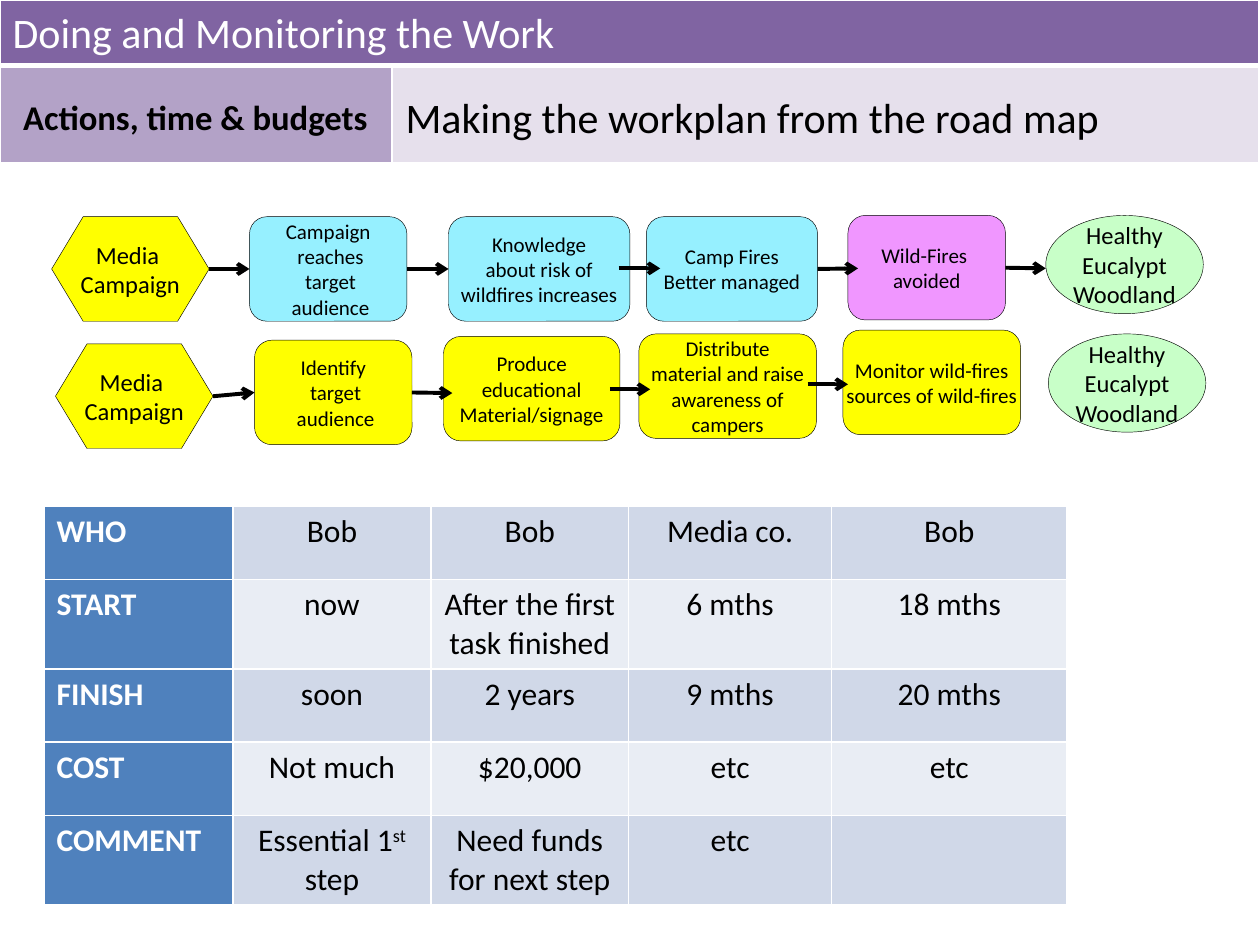
from dataclasses import dataclass

from lxml.etree import SubElement
from pptx import Presentation
from pptx.dml.color import RGBColor
from pptx.enum.shapes import MSO_CONNECTOR as Link, MSO_SHAPE as Shape
from pptx.enum.text import MSO_ANCHOR as Anchor, MSO_AUTO_SIZE as AutoSize, PP_ALIGN as Align
from pptx.oxml.ns import qn
from pptx.util import Inches, Pt


@dataclass(frozen=True)
class Theme:
    font: str = "Calibri"
    black: str = "000000"
    white: str = "FFFFFF"
    purple: str = "8064A2"
    mauve: str = "B3A2C7"
    lilac: str = "E6E0EC"
    yellow: str = "FFFF00"
    cyan: str = "96F0FF"
    pink: str = "F096FF"
    green: str = "C8FFC8"
    blue: str = "4F81BD"
    band_dark: str = "D0D8E8"
    band_light: str = "E9EDF4"
    title: float = 24
    section: float = 19.8
    cell: float = 18
    goal: float = 14
    step: float = 12


theme = Theme()
color = RGBColor.from_string
deck = Presentation()
deck.slide_width, deck.slide_height = Inches(10), Inches(7.5)
page = deck.slides.add_slide(deck.slide_layouts[5])

# Grid of 100 columns by 75 rows
COL, ROW = deck.slide_width / 100, deck.slide_height / 75


def place(left, top, width, height):
    return [round(left * COL), round(top * ROW), round(width * COL), round(height * ROW)]


def write(frame, lines, size, ink=theme.black, bold=False, align=Align.CENTER):
    """Fill a text frame; text between two carets is raised."""
    for number, line in enumerate(lines):
        para = frame.paragraphs[0] if number == 0 else frame.add_paragraph()
        para.alignment = align
        for index, part in enumerate(line.split("^")):
            span = para.add_run() if "\v" not in part else None
            if span is None:
                for row, piece in enumerate(part.split("\v")):
                    if row:
                        para.add_line_break()
                    para.add_run().text = piece
            else:
                span.text = part
                if index % 2:
                    span.font._element.set("baseline", "30000")
        for span in para.runs:
            for name, value in {"name": theme.font, "size": Pt(size), "bold": bold}.items():
                setattr(span.font, name, value)
            span.font.color.rgb = color(ink)


# Header bands and workplan, both as tables
plan = [
    ["WHO", "Bob", "Bob", "Media co.", "Bob"],
    ["START", "now", "After the first task finished", "6 mths", "18 mths"],
    ["FINISH", "soon", "2 years", "9 mths", "20 mths"],
    ["COST", "Not much", "$20,000", "etc", "etc"],
    ["COMMENT", "Essential 1^st^ step", "Need funds for next step", "etc", ""],
]
plan_fills = [
    [theme.blue] + [theme.band_light if row % 2 else theme.band_dark] * 4 for row in range(5)
]
header_fills = [[theme.purple] * 2, [theme.mauve, theme.lilac]]
tables = [
    (0, 0, [31.1, 68.8], [5.2, 7.7], header_fills, [["", ""]] * 2),
    (3.5, 40.2, [15, 15.7, 15.7, 16.1, 18.7], [5.8] * 5, plan_fills, plan),
]
for left, top, widths, heights, fills, texts in tables:
    is_header = fills is header_fills
    area = place(left, top, sum(widths), sum(heights))
    table = page.shapes.add_table(len(heights), len(widths), *area).table
    table.first_row = table.horz_banding = False
    for column, width in zip(table.columns, widths):
        column.width = round(width * COL)
    for row, height in zip(table.rows, heights):
        row.height = round(height * ROW)
    for r, row in enumerate(texts):
        for c, text in enumerate(row):
            cell = table.cell(r, c)
            props = cell._tc.get_or_add_tcPr()
            for side in ("lnL", "lnR", "lnT", "lnB"):
                thick = is_header and (r, side) in ((0, "lnB"), (1, "lnT"))
                edge = SubElement(props, qn(f"a:{side}"), w=str(Pt(3 if thick else 1)))
                paint = SubElement(edge, qn("a:solidFill"))
                SubElement(paint, qn("a:srgbClr"), val=theme.white)
            cell.fill.solid()
            cell.fill.fore_color.rgb = color(fills[r][c])
            if text:
                head = c == 0
                write(cell.text_frame, [text], theme.cell,
                      theme.white if head else theme.black, head,
                      Align.LEFT if head else Align.CENTER)
    if is_header:
        table.cell(0, 0).merge(table.cell(0, 1))

# Title, moved in front of the header bands
title = page.shapes.title
page.shapes._spTree.append(title._element)
title.left, title.top, title.width, title.height = place(0, 0, 99.8, 5.1)
section = page.shapes.add_textbox(*place(0.1, 5.7, 30.8, 7.1))
topic = page.shapes.add_textbox(*place(31.2, 6.8, 68.8, 5))
headings = [
    (title, "Doing and Monitoring the Work", theme.title, theme.white, False, Align.LEFT, Anchor.TOP),
    (section, "Actions, time & budgets", theme.section, theme.black, True, Align.CENTER, Anchor.MIDDLE),
    (topic, "Making the workplan from the road map", theme.title, theme.black, False, Align.LEFT, Anchor.TOP),
]
for box, text, size, ink, bold, align, anchor in headings:
    frame = box.text_frame
    layout = {"word_wrap": True, "auto_size": AutoSize.NONE, "vertical_anchor": anchor}
    for name, value in layout.items():
        setattr(frame, name, value)
    write(frame, [text], size, ink, bold, align)

# Road map (upper row) and its tasks (lower row): left, top, width, look, lines
start = (Shape.FLOWCHART_PREPARATION, theme.yellow, 8.3, theme.goal)
result = (Shape.ROUNDED_RECTANGLE, theme.cyan, 8.3, theme.step)
threat = (Shape.ROUNDED_RECTANGLE, theme.pink, 8.3, theme.step)
task = (Shape.ROUNDED_RECTANGLE, theme.yellow, 8.3, theme.step)
target = (Shape.OVAL, theme.green, 7.8, theme.goal)
campaign = ["Media ", "Campaign"]
woodland = ["Healthy", "Eucalypt", "Woodland"]
stages = [
    (4.1, 17.2, 12.5, start, campaign),
    (19.8, 17.2, 12.5, result, ["Campaign", " reaches", " target", " audience"]),
    (35.6, 17.2, 14.4, result, ["Knowledge\vabout risk of\vwildfires increases"]),
    (51.3, 17.2, 13.6, result, ["Camp Fires", "Better managed"]),
    (67.3, 17.1, 12.5, threat, ["Wild-Fires ", "avoided"]),
    (83, 17.1, 12.5, target, woodland),
    (4.4, 27.3, 12.5, start, campaign),
    (20.2, 27, 12.5, task, ["Identify", " target", " audience"]),
    (35.2, 26.7, 14, task, ["Produce\veducational", "Material/signage"]),
    (50.7, 26.5, 14.1, task, ["Distribute\vmaterial and raise\vawareness of\vcampers"]),
    (66.9, 26.2, 14.1, task, ["Monitor wild-fires\vsources of wild-fires"]),
    (83.2, 26.5, 12.5, target, woodland),
]
boxes = []
for left, top, width, (outline, fill, height, size), lines in stages:
    box = page.shapes.add_shape(outline, *place(left, top, width, height))
    box.shadow.inherit = False
    box.fill.solid()
    box.fill.fore_color.rgb = color(fill)
    box.line.color.rgb = color(theme.black)
    box.line.width = Pt(0.25)
    frame = box.text_frame
    frame.word_wrap = False
    frame.vertical_anchor = Anchor.MIDDLE
    if outline == Shape.OVAL:
        for side in ("left", "top", "right", "bottom"):
            setattr(frame, f"margin_{side}", 0)
    write(frame, lines, size)
    boxes.append(box)

# Arrows: left, right, row, stage joined at the start, stage joined at the end
arrows = [
    (16.6, 19.8, 21.4, 0, 1),
    (32.3, 35.6, 21.4, 1, 2),
    (49.1, 52.4, 21.3, None, None),
    (64.9, 68.1, 21.3, 3, None),
    (79.8, 83, 21.3, 4, None),
    (16.9, 20.2, 31.4, 6, 7),
    (32.7, 35.9, 31.2, 7, None),
    (48.4, 51.6, 30.9, None, None),
    (64.1, 67.3, 30.5, None, None),
]
for left, right, row, before, after in arrows:
    y = round(row * ROW)
    arrow = page.shapes.add_connector(Link.STRAIGHT, round(left * COL), y, round(right * COL), y)
    if before is not None:
        arrow.begin_connect(boxes[before], 3)
    if after is not None:
        arrow.end_connect(boxes[after], 1)
    arrow.line.color.rgb = color(theme.black)
    arrow.line.width = Pt(2.25)
    SubElement(arrow.line._get_or_add_ln(), qn("a:tailEnd"), type="arrow")
    SubElement(arrow._element.spPr, qn("a:effectLst"))

deck.save("out.pptx")
